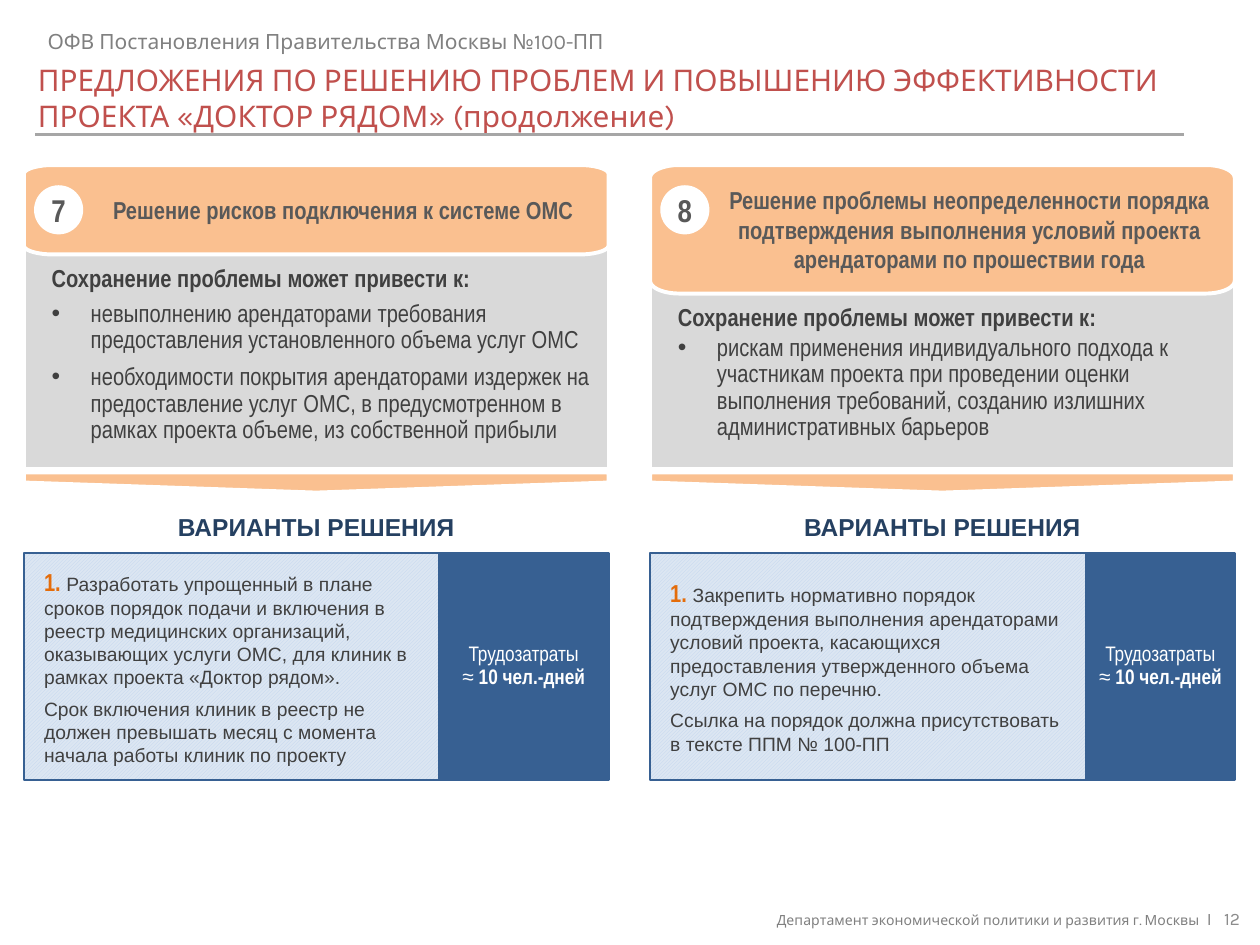
import math
from lxml import etree
from pptx import Presentation
from pptx import util as u
from pptx.dml.color import RGBColor
from pptx.enum import dml, shapes, text
from pptx.oxml.ns import qn

PEACH = RGBColor(0xFA, 0xC0, 0x90)
RED = RGBColor(0xC0, 0x50, 0x4D)
ORANGE = RGBColor(0xE4, 0x6C, 0x0A)
BLUE = RGBColor(0x37, 0x60, 0x92)
NAVY = RGBColor(0x25, 0x40, 0x61)
HATCH = RGBColor(0xC0, 0xD5, 0xEE)
PALE_BLUE = RGBColor(0xDC, 0xE6, 0xF2)
WHITE = RGBColor(0xFF, 0xFF, 0xFF)
PANEL = RGBColor(0xD9, 0xD9, 0xD9)
RULE = RGBColor(0xA6, 0xA6, 0xA6)
PAGE_GRAY = RGBColor(0x8C, 0x8C, 0x8C)
GRAY = RGBColor(0x80, 0x80, 0x80)
DARK = RGBColor(0x59, 0x59, 0x59)
INK = RGBColor(0x40, 0x40, 0x40)
NARROW, SANS, BRAND = "Arial Narrow", "Arial", "Karla"
LEFT, CENTER, RIGHT = text.PP_ALIGN.LEFT, text.PP_ALIGN.CENTER, text.PP_ALIGN.RIGHT
TOP, MIDDLE = text.MSO_ANCHOR.TOP, text.MSO_ANCHOR.MIDDLE
SHAPE = shapes.MSO_SHAPE

COLUMN_WIDTH = 4.64
COLUMNS = [
    dict(left=0.19, number="7", header_height=0.71, share=0.71, gap=(3, 3),
         heading="Решение рисков подключения к системе ОМС",
         risks=["невыполнению арендаторами требования предоставления установленного объема услуг ОМС",
                "необходимости покрытия арендаторами издержек на предоставление услуг ОМС, в предусмотренном "
                "в рамках проекта объеме, из собственной прибыли"],
         option="Разработать упрощенный в плане сроков порядок подачи и включения в реестр медицинских "
                "организаций, оказывающих услуги ОМС, для клиник в рамках проекта «Доктор рядом».",
         remark="Срок включения клиник в реестр не должен превышать месяц с момента начала работы "
                "клиник по проекту"),
    dict(left=5.16, number="8", header_height=1.02, share=0.746, gap=(0, 2),
         heading="Решение проблемы неопределенности порядка подтверждения выполнения условий проекта "
                 "арендаторами по прошествии года",
         risks=["рискам применения индивидуального подхода к участникам проекта при проведении оценки "
                "выполнения требований, созданию излишних административных барьеров"],
         option="Закрепить нормативно порядок подтверждения выполнения арендаторами условий проекта, "
                "касающихся предоставления утвержденного объема услуг ОМС по перечню.",
         remark="Ссылка на порядок должна присутствовать\nв тексте ППМ № 100-ПП"),
]


def set_frame(shape, anchor=MIDDLE, insets=(0.1, 0.05, 0.1, 0.05)):
    frame = shape.text_frame
    frame.word_wrap = True
    frame.auto_size = text.MSO_AUTO_SIZE.NONE
    frame.vertical_anchor = anchor
    frame.margin_left, frame.margin_top, frame.margin_right, frame.margin_bottom = map(u.Inches, insets)
    return frame


def write(paragraph, runs, align=LEFT, spacing=1.0, before=0, after=0):
    paragraph.alignment = align
    paragraph.line_spacing = spacing
    paragraph.space_before, paragraph.space_after = u.Pt(before), u.Pt(after)
    for wording, size, font, color, bold in runs:
        for index, line in enumerate(wording.split("\n")):
            if index:
                paragraph.add_line_break()
            run = paragraph.add_run()
            run.text = line
            run.font.size, run.font.name, run.font.bold = u.Pt(size), font, bold
            run.font.color.rgb = color


def set_bullet(paragraph, margin, indent, char=None):
    props = paragraph._p.get_or_add_pPr()
    props.set("marL", str(u.Inches(margin)))
    props.set("indent", str(u.Inches(indent)))
    if char:
        etree.SubElement(props, qn("a:buFont"), typeface="Arial")
        etree.SubElement(props, qn("a:buChar"), char=char)
    else:
        etree.SubElement(props, qn("a:buNone"))


def paint(shape, fill, line=None, weight=1.5):
    shape.fill.solid()
    shape.fill.fore_color.rgb = fill
    outline(shape, line, weight)


def outline(shape, line, weight):
    if line is None:
        shape.line.fill.background()
    else:
        shape.line.color.rgb = line
        shape.line.width = u.Pt(weight)


def place(shape, box):
    shape.left, shape.top, shape.width, shape.height = map(u.Inches, box)


def add_preset(slide, preset, box):
    shape = slide.shapes.add_shape(preset, *map(u.Inches, box))
    shape.shadow.inherit = False
    return shape


def add_label(slide, box, runs, anchor=MIDDLE, insets=(0, 0, 0, 0), **layout):
    label = slide.shapes.add_textbox(*map(u.Inches, box))
    write(set_frame(label, anchor, insets).paragraphs[0], runs, **layout)


def page_frame(slide, box):
    left, top, width, height = box
    title = slide.shapes.title
    place(title, (left + 0.2, top + 0.44, width * 0.97, 0.67))
    write(set_frame(title, TOP).paragraphs[0],
          [("ПРЕДЛОЖЕНИЯ ПО РЕШЕНИЮ ПРОБЛЕМ И ПОВЫШЕНИЮ ЭФФЕКТИВНОСТИ\n"
            "ПРОЕКТА «ДОКТОР РЯДОМ» (продолжение)", 17, BRAND, RED, False)])
    rule = slide.shapes.add_connector(
        shapes.MSO_CONNECTOR.STRAIGHT,
        *map(u.Inches, (left + 0.28, top + 1.07, left + width * 0.94, top + 1.07)))
    rule.line.color.rgb = RULE
    rule.line.width = u.Pt(1.5)
    etree.SubElement(rule._element.spPr, qn("a:effectLst"))
    add_label(slide, (left + 0.28, top + 0.18, width * 0.72, 0.3),
              [("ОФВ Постановления Правительства Москвы №100-ПП", 12, BRAND, GRAY, False)],
              TOP, (0.1, 0.05, 0.1, 0.05))
    add_label(slide, (left + width / 2, top + height - 0.29, width * 0.494, 0.16),
              [("Департамент экономической политики и развития г. Москвы  ", 8, BRAND, GRAY, False),
               ("I   ", 10, BRAND, GRAY, False), ("12", 10, BRAND, PAGE_GRAY, False)],
              insets=(0.1, 0.05, 0.1, 0.05), align=RIGHT)


def risk_list(panel, box, risks, gap):
    place(panel, box)
    paint(panel, PANEL, WHITE, 2.25)
    frame = set_frame(panel, TOP, (0.12, 0.16, 0.12, 0.08))
    lead = frame.paragraphs[0]
    write(lead, [("Сохранение проблемы может привести к:", 14, NARROW, INK, True)], spacing=0.9, after=2)
    set_bullet(lead, 0.31, -0.21)
    for risk in risks:
        item = frame.add_paragraph()
        write(item, [(risk, 14, NARROW, INK, False)], spacing=0.9, before=gap[0], after=gap[1])
        set_bullet(item, 0.41, -0.31, "•")


def problem_header(slide, box, number, heading):
    left, top, width, height = box
    rx, ry = width * 0.05, height * 0.1
    corners = [(left + width - rx, top + ry, 270), (left + width - rx, top + height - ry, 0),
               (left + rx, top + height - ry, 90), (left + rx, top + ry, 180)]
    points = [(u.Inches(x + rx * math.cos(math.radians(start + step))),
               u.Inches(y + ry * math.sin(math.radians(start + step))))
              for x, y, start in corners for step in range(0, 91, 10)]
    builder = slide.shapes.build_freeform(*points[0])
    builder.add_line_segments(points[1:], close=True)
    banner = builder.convert_to_shape()
    banner.shadow.inherit = False
    paint(banner, PEACH, WHITE, 2.25)
    write(set_frame(banner, MIDDLE, (0.51, 0.03, 0.08, 0.03)).paragraphs[0],
          [(heading, 14, NARROW, DARK, True)], CENTER)
    badge = add_preset(slide, SHAPE.OVAL, (left + 0.08, top + 0.16, 0.39, 0.39))
    paint(badge, WHITE)
    write(set_frame(badge, MIDDLE, (0, 0, 0, 0)).paragraphs[0], [(number, 18, NARROW, DARK, True)], CENTER)


def down_pointer(slide, box):
    left, top, width, height = box
    pointer = add_preset(slide, SHAPE.PENTAGON,
                         (left + (width - height) / 2, top + (height - width) / 2, height, width))
    pointer.rotation = 90
    paint(pointer, PEACH, WHITE, 2.25)


def solution(slide, box, share, option, remark):
    left, top, width, height = box
    add_label(slide, (left, top, width, 0.33), [("ВАРИАНТЫ РЕШЕНИЯ", 14, SANS, NAVY, True)],
              align=CENTER, spacing=0.9, after=6)
    row_top, row_height = top + 0.36, height - 0.36
    effort = add_preset(slide, SHAPE.RECTANGLE,
                        (left + width * share, row_top, width * (1 - share), row_height))
    paint(effort, BLUE, BLUE)
    write(set_frame(effort, MIDDLE, (0.08, 0.04, 0.08, 0.04)).paragraphs[0],
          [("Трудозатраты\n≈ ", 12, NARROW, WHITE, False), ("10 чел.-дней", 12, NARROW, WHITE, True)],
          CENTER, 0.9, after=6)
    measure = add_preset(slide, SHAPE.PENTAGON, (left, row_top, width * share, row_height))
    measure.adjustments[0] = 0
    measure.fill.patterned()
    measure.fill.pattern = dml.MSO_PATTERN.LIGHT_UPWARD_DIAGONAL
    measure.fill.fore_color.rgb, measure.fill.back_color.rgb = HATCH, PALE_BLUE
    outline(measure, BLUE, 1.5)
    frame = set_frame(measure, MIDDLE, (0.16, 0.08, 0.12, 0.08))
    write(frame.paragraphs[0], [("1. ", 14, NARROW, ORANGE, True), (option, 11, SANS, INK, False)], after=5)
    write(frame.add_paragraph(), [(remark, 11, SANS, INK, False)], after=5)


def problem_column(slide, panel, box, column):
    left, top, width, height = box
    header = column["header_height"]
    panel_top = header - 0.07
    down_pointer(slide, (left, top + 2.44, width, 0.16))
    risk_list(panel, (left, top + panel_top, width, 2.41 - panel_top), column["risks"], column["gap"])
    problem_header(slide, (left, top, width, header), column["number"], column["heading"])
    solution(slide, (left, top + 2.72, width, height - 2.72),
             column["share"], column["option"], column["remark"])


def main():
    deck = Presentation()
    deck.slide_width, deck.slide_height = u.Inches(10), u.Inches(7.5)
    slide = deck.slides.add_slide(deck.slide_layouts[3])
    page_frame(slide, (0, 0, 10, 7.5))
    for index, column in enumerate(COLUMNS, 1):
        problem_column(slide, slide.placeholders[index], (column["left"], 1.31, COLUMN_WIDTH, 4.88), column)
    deck.save("out.pptx")


if __name__ == "__main__":
    main()
